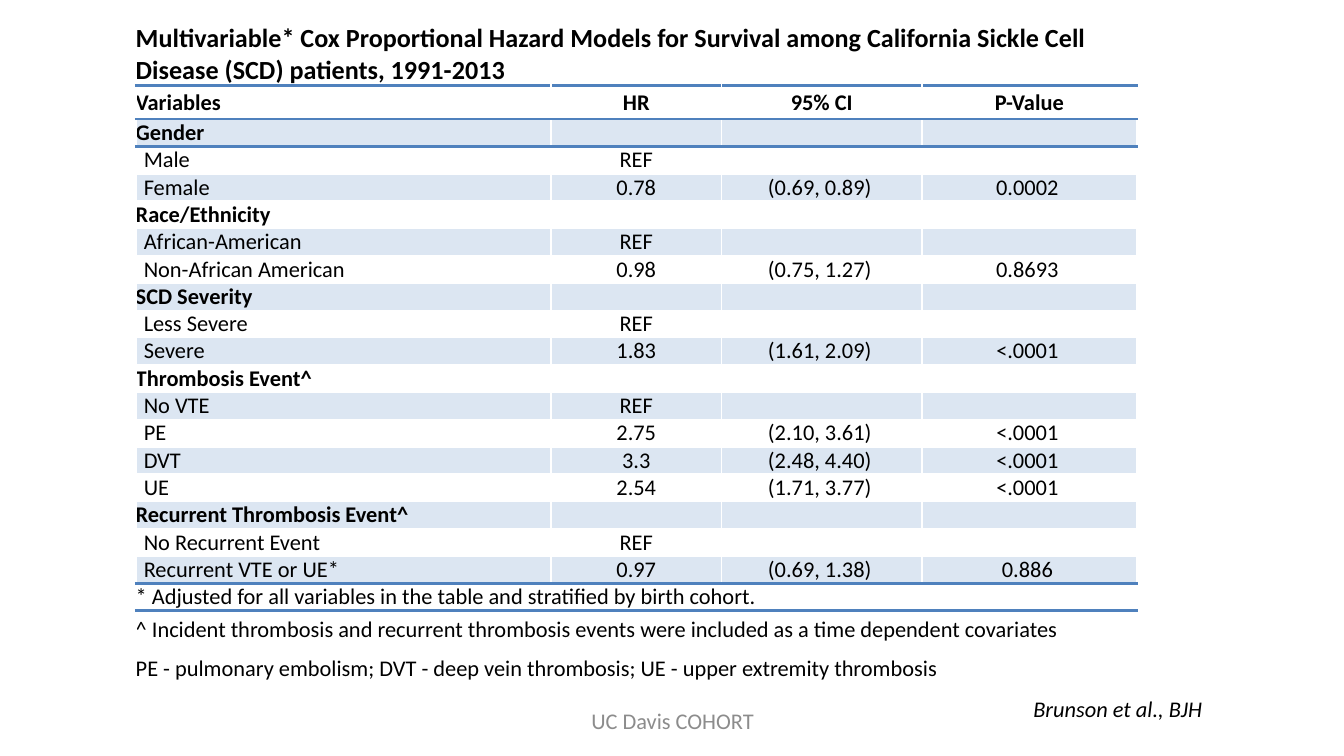
from lxml import etree
from pptx import Presentation
from pptx.dml.color import RGBColor
from pptx.enum.text import MSO_ANCHOR, PP_ALIGN
from pptx.oxml.ns import qn
from pptx.util import Inches, Pt

CENTER = PP_ALIGN.CENTER
LEFT = PP_ALIGN.LEFT
MIDDLE = MSO_ANCHOR.MIDDLE
TOP = MSO_ANCHOR.TOP

BLACK = RGBColor(0x00, 0x00, 0x00)
WHITE = RGBColor(0xFF, 0xFF, 0xFF)
GRAY = RGBColor(0x8C, 0x8C, 0x8C)
BLUE = RGBColor(0x4F, 0x81, 0xBD)
PALE_BLUE = RGBColor(0xDC, 0xE6, 0xF2)

SLIDE_WIDTH = 10
SLIDE_HEIGHT = SLIDE_WIDTH * 9 / 16
FONT = "Calibri"
TITLE = ("Multivariable* Cox Proportional Hazard Models for Survival among "
         "California Sickle Cell Disease (SCD) patients, 1991-2013")
HEADINGS = ["Variables", "HR", "95% CI", "P-Value"]
GROUPS = [
    ("Gender", [
        ("Male", "REF"),
        ("Female", "0.78", "(0.69, 0.89)", "0.0002"),
    ]),
    ("Race/Ethnicity", [
        ("African-American", "REF"),
        ("Non-African American", "0.98", "(0.75, 1.27)", "0.8693"),
    ]),
    ("SCD Severity", [
        ("Less Severe", "REF"),
        ("Severe", "1.83", "(1.61, 2.09)", "<.0001"),
    ]),
    ("Thrombosis Event^", [
        ("No VTE", "REF"),
        ("PE", "2.75", "(2.10, 3.61)", "<.0001"),
        ("DVT", "3.3", "(2.48, 4.40)", "<.0001"),
        ("UE", "2.54", "(1.71, 3.77)", "<.0001"),
    ]),
    ("Recurrent Thrombosis Event^", [
        ("No Recurrent Event", "REF"),
        ("Recurrent VTE or UE*", "0.97", "(0.69, 1.38)", "0.886"),
    ]),
]
FOOTNOTES = [
    "* Adjusted for all variables in the table and stratified by birth cohort.",
    "^ Incident thrombosis and recurrent thrombosis events were included "
    "as a time dependent covariates",
    "PE - pulmonary embolism; DVT - deep vein thrombosis; "
    "UE - upper extremity thrombosis",
]
COLUMN_WIDTHS = [3.09, 1.27, 1.49, 1.6]
TABLE_HEIGHT = 4.95
TITLE_HEIGHT, HEADING_HEIGHT, NOTE_HEIGHT = 0.46, 0.25, 0.29
RULES = {0: 2.25, 1: 1.5, 2: 1.5, 18: 2.25, 19: 1.5}


def add_text(frame, text, size=12, color=BLACK, bold=False, italic=False,
             align=LEFT):
    paragraph = frame.paragraphs[0]
    paragraph.alignment = align
    run = paragraph.add_run()
    run.text = text
    font = run.font
    font.name, font.size = FONT, Pt(size)
    font.bold, font.italic = bold, italic
    font.color.rgb = color


def add_label(slide, left, top, width, text, anchor=TOP, **style):
    label = slide.shapes.add_textbox(
        Inches(left), Inches(top), Inches(width), Inches(0.3))
    frame = label.text_frame
    frame.word_wrap = True
    frame.vertical_anchor = anchor
    add_text(frame, text, **style)


def set_border(cell, side, color, width):
    line = etree.SubElement(cell._tc.get_or_add_tcPr(), qn(f"a:ln{side}"),
                            w=str(Pt(width)))
    fill = etree.SubElement(line, qn("a:solidFill"))
    etree.SubElement(fill, qn("a:srgbClr"), val=str(color))


def format_cell(cell, row, shaded):
    cell.margin_left = cell.margin_right = 0
    cell.margin_top = cell.margin_bottom = 0
    cell.vertical_anchor = MIDDLE
    for side in "LR":
        set_border(cell, side, WHITE, 1)
    for side, rule in (("T", row - 1), ("B", row)):
        color = BLUE if rule in RULES else WHITE
        set_border(cell, side, color, RULES.get(rule, 1))
    if shaded:
        cell.fill.solid()
        cell.fill.fore_color.rgb = PALE_BLUE
    else:
        cell.fill.background()


def fill_row(table, row, texts, bold=False, indent=0):
    for column, text in enumerate(texts):
        cell = table.cell(row, column)
        cell.margin_left = Inches(0 if column else indent)
        if column > 1 and indent:
            cell.margin_right = Inches(0.03)
        add_text(cell.text_frame, text, bold=bold,
                 align=CENTER if column else LEFT)


def fill_wide_row(table, row, text, **style):
    first = table.cell(row, 0)
    first.merge(table.cell(row, len(COLUMN_WIDTHS) - 1))
    add_text(first.text_frame, text, **style)


def add_hazard_table(slide):
    body_count = sum(1 + len(levels) for _, levels in GROUPS)
    first_note = 2 + body_count
    narrow_count = body_count + 1
    tops = [TITLE_HEIGHT, HEADING_HEIGHT]
    notes = [NOTE_HEIGHT] * (len(FOOTNOTES) - 1)
    row_height = (TABLE_HEIGHT - sum(tops + notes)) / narrow_count
    heights = tops + [row_height] * narrow_count + notes
    table = slide.shapes.add_table(
        len(heights), len(COLUMN_WIDTHS), Inches(1.01), Inches(0.17),
        Inches(sum(COLUMN_WIDTHS)), Inches(TABLE_HEIGHT)).table
    table.first_row = table.horz_banding = False
    for column, width in zip(table.columns, COLUMN_WIDTHS):
        column.width = Inches(width)

    for row, height in enumerate(heights):
        table.rows[row].height = Inches(height)
        shaded = 2 <= row < first_note and row % 2 == 0
        for cell in table.rows[row].cells:
            format_cell(cell, row, shaded)

    fill_wide_row(table, 0, TITLE, size=14, bold=True)
    fill_row(table, 1, HEADINGS, bold=True)
    row = 2
    for group, levels in GROUPS:
        fill_row(table, row, [group], bold=True)
        for offset, level in enumerate(levels, 1):
            fill_row(table, row + offset, level, indent=0.06)
        row += 1 + len(levels)
    for offset, note in enumerate(FOOTNOTES):
        fill_wide_row(table, first_note + offset, note)

    for cell in table.iter_cells():
        if not cell.text_frame.text:
            etree.SubElement(cell.text_frame.paragraphs[0]._p,
                             qn("a:endParaRPr"), sz="1200")


def main():
    deck = Presentation()
    deck.slide_width = Inches(SLIDE_WIDTH)
    deck.slide_height = Inches(SLIDE_HEIGHT)
    slide = deck.slides.add_slide(deck.slide_layouts[6])
    add_label(slide, 3.42, 5.21, 3.17, "UC Davis COHORT", anchor=MIDDLE,
              color=GRAY, align=CENTER)
    add_label(slide, 7.59, 5.12, 2.17, "Brunson et al., BJH", italic=True)
    add_hazard_table(slide)
    deck.save("out.pptx")


if __name__ == "__main__":
    main()
